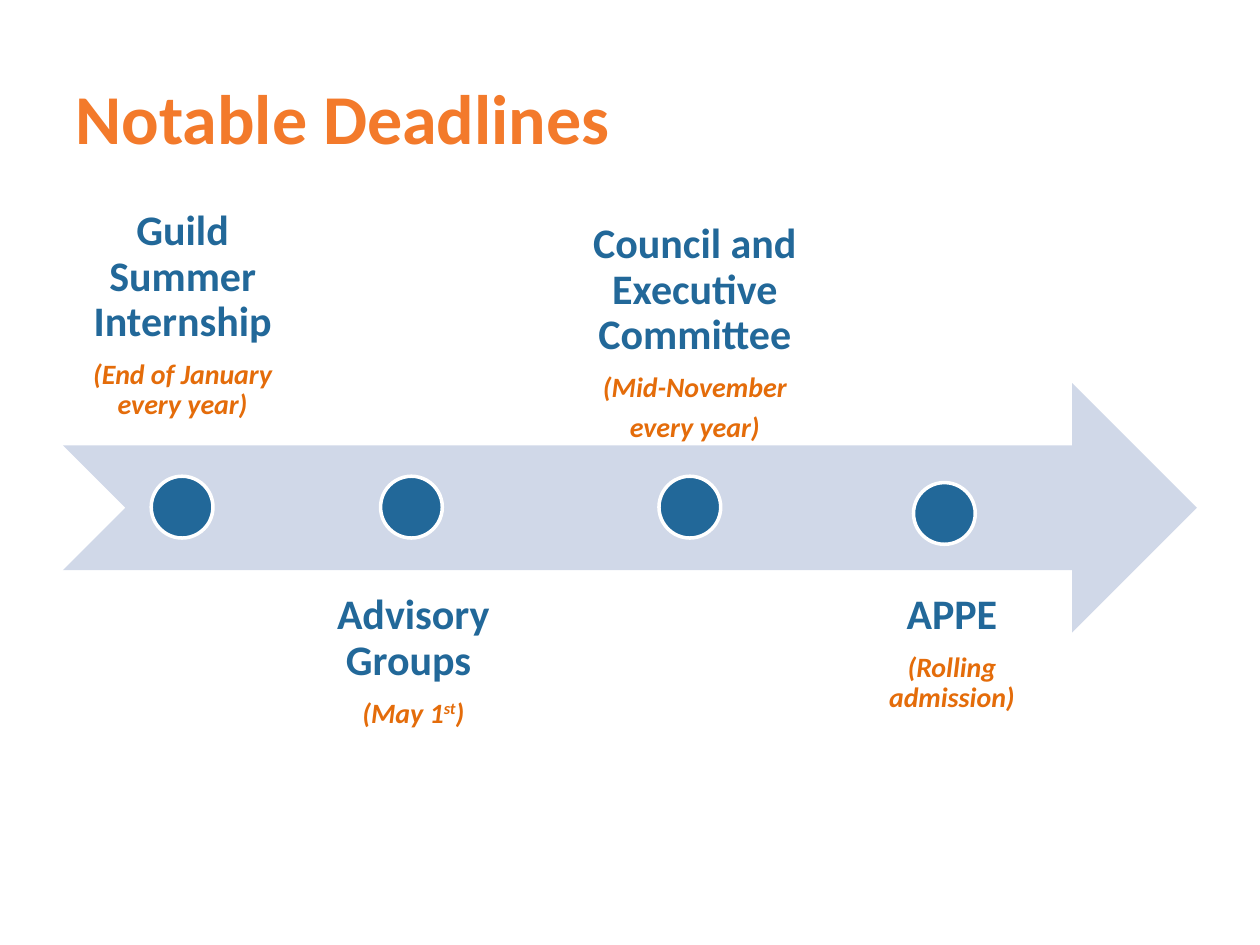
from pptx import Presentation
from pptx.dml.color import RGBColor
from pptx.enum.shapes import MSO_SHAPE
from pptx.enum.text import MSO_ANCHOR, PP_ALIGN
from pptx.util import Inches, Pt

ORANGE = RGBColor(0xF3, 0x7A, 0x2B)
DARK_ORANGE = RGBColor(0xE4, 0x6C, 0x0A)
BLUE = RGBColor(0x22, 0x68, 0x99)
PALE_BLUE = RGBColor(0xD0, 0xD8, 0xE8)
WHITE = RGBColor(0xFF, 0xFF, 0xFF)

FONT = "Calibri"
LABEL_HEIGHT = 1.98
DOT_SIZE = 0.49
ABOVE, BELOW = MSO_ANCHOR.BOTTOM, MSO_ANCHOR.TOP

DEADLINES = [
    ("Guild Summer Internship", ["(End of January every year)"], (0.5, 1.55, 1.9), ABOVE, (1.2, 3.78)),
    ("Advisory Groups ", [("(May 1", "st", ")")], (2.34, 4.52, 1.88), BELOW, (3.02, 3.78)),
    ("Council and Executive Committee", ["(Mid-November", "every year)"], (4.33, 1.73, 2.37), ABOVE, (5.23, 3.78)),
    ("APPE", ["(Rolling admission)"], (6.71, 4.52, 1.69), BELOW, (7.25, 3.83)),
]


def set_font(paragraph, size, color, italic=False):
    """Give a whole paragraph its bold font."""
    font = paragraph.font
    font.name, font.size, font.bold, font.italic = FONT, Pt(size), True, italic
    font.color.rgb = color


def set_title(page, text):
    """Fill and place the title placeholder."""
    title = page.shapes.title
    title.left, title.top, title.width, title.height = map(Inches, (0.5, 0.3, 9, 1.25))
    title.text_frame.text = text
    title.text_frame.vertical_anchor = MSO_ANCHOR.MIDDLE
    paragraph = title.text_frame.paragraphs[0]
    paragraph.alignment = PP_ALIGN.LEFT
    set_font(paragraph, 40, ORANGE)


def add_filled_shape(page, kind, left, top, width, height, color):
    """Add a flat preset shape without an outline."""
    shape = page.shapes.add_shape(kind, Inches(left), Inches(top), Inches(width), Inches(height))
    shape.shadow.inherit = False
    shape.fill.solid()
    shape.fill.fore_color.rgb = color
    shape.line.fill.background()
    return shape


def add_dot(page, left, top):
    """Add a white-ringed timeline dot."""
    dot = add_filled_shape(page, MSO_SHAPE.OVAL, left, top, DOT_SIZE, DOT_SIZE, BLUE)
    dot.line.color.rgb = WHITE
    dot.line.width = Pt(2)


def add_spans(paragraph, content):
    """Write plain text, or a (text, superscript, text) triple."""
    if isinstance(content, str):
        paragraph.add_run().text = content
        return
    for index, text in enumerate(content):
        span = paragraph.add_run()
        span.text = text
        if index == 1:
            span._r.get_or_add_rPr().set("baseline", "30000")


def add_label(page, name, dates, left, top, width, anchor):
    """Add a deadline name with its date lines."""
    box = page.shapes.add_textbox(Inches(left), Inches(top), Inches(width), Inches(LABEL_HEIGHT))
    frame = box.text_frame
    frame.word_wrap = True
    frame.vertical_anchor = anchor
    frame.margin_left = frame.margin_right = frame.margin_top = frame.margin_bottom = Inches(0.19)
    for index, content in enumerate([name, *dates]):
        is_name = index == 0
        paragraph = frame.paragraphs[0] if is_name else frame.add_paragraph()
        size = 24 if is_name else 16
        add_spans(paragraph, content)
        paragraph.alignment = PP_ALIGN.CENTER
        paragraph.line_spacing = 0.9
        paragraph.space_after = Pt(0.35 * size)
        set_font(paragraph, size, BLUE if is_name else DARK_ORANGE, italic=not is_name)


def main():
    """Build the deadlines timeline."""
    deck = Presentation()
    deck.slide_width, deck.slide_height = Inches(10), Inches(7.5)
    page = deck.slides.add_slide(deck.slide_layouts[5])
    set_title(page, "Notable Deadlines")
    add_filled_shape(page, MSO_SHAPE.NOTCHED_RIGHT_ARROW, 0.5, 3.04, 9, 1.98, PALE_BLUE)
    for name, dates, place, anchor, dot_place in DEADLINES:
        add_label(page, name, dates, *place, anchor)
        add_dot(page, *dot_place)
    deck.save("out.pptx")


if __name__ == "__main__":
    main()
